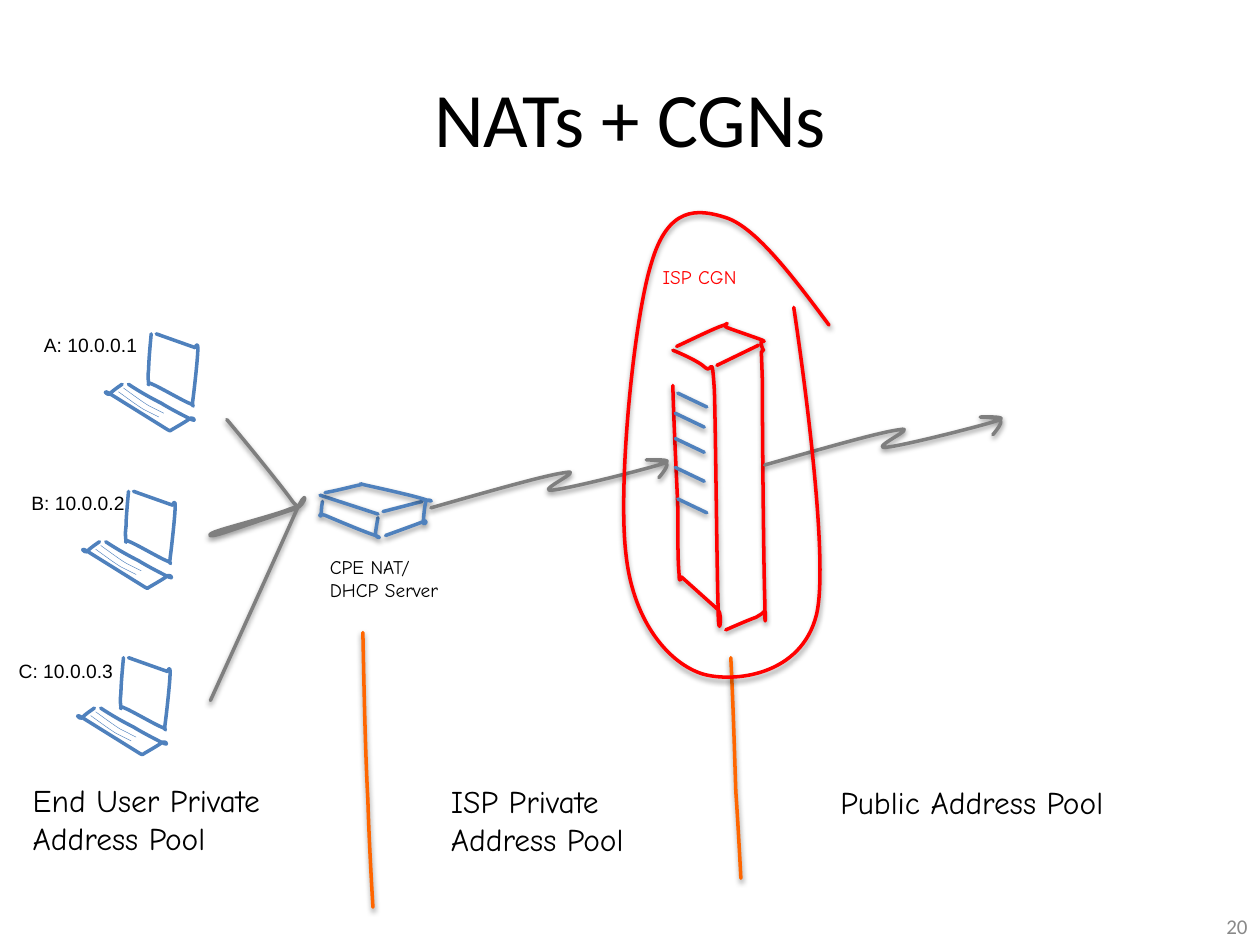
from lxml.etree import SubElement
from pptx import Presentation
from pptx.dml.color import RGBColor
from pptx.enum.text import MSO_ANCHOR as Anchor, MSO_AUTO_SIZE as AutoSize, PP_ALIGN as Align
from pptx.oxml.ns import qn
from pptx.util import Cm, Pt

BLACK = RGBColor(0x00, 0x00, 0x00)
NUMBER_GREY = RGBColor(0x89, 0x89, 0x89)
LINK_GREY = RGBColor(0x7F, 0x7F, 0x7F)
RED = RGBColor(0xFF, 0x00, 0x00)
BLUE = RGBColor(0x4F, 0x81, 0xBD)
ORANGE = RGBColor(0xFF, 0x66, 0x00)

HAND_FONT = "Comic Neue"
GRID = Cm(0.0254)  # one step of the sketch grid

# Strokes: a start point, then (x, y) for a line or
# (x1, y1, x2, y2, x, y) for a cubic curve, in grid steps
LAPTOP_BODY = [
    [(120, 265), (119, 276, 118, 287, 118, 293), (117, 300, 118, 303, 118, 305),
     (119, 307, 115, 302, 121, 305), (126, 307, 145, 318, 150, 320),
     (156, 322, 152, 325, 153, 318), (154, 311, 157, 284, 157, 277),
     (157, 270, 155, 276, 155, 276), (124, 265), (127, 266)],
    [(102, 305), (111, 311, 120, 316, 128, 320), (136, 325, 148, 331, 152, 333),
     (156, 335, 154, 331, 151, 332), (149, 334, 138, 340, 135, 342), (133, 341),
     (88, 313), (80, 308, 85, 314, 87, 313), (88, 311, 97, 305, 97, 305)],
]
LAPTOP_KEYS = [(94, 311), (101, 316, 109, 322, 114, 325), (120, 328, 126, 331, 126, 331)]
KEY_ROWS = [(0, 0), (4, -3)]
LAPTOPS = [("A: 10.0.0.1", (0, 0), (25, 260, 96)),
           ("B: 10.0.0.2", (-18, 125), (15, 385, 95)),
           ("C: 10.0.0.3", (-22, 257), (5, 518, 96))]

CPE_BOX = [
    [(256, 398), (255, 403, 255, 408, 255, 409), (255, 411, 251, 407, 258, 409),
     (265, 412, 291, 423, 298, 425), (305, 428, 298, 427, 298, 424),
     (298, 422, 300, 411, 300, 411)],
    [(254, 393), (300, 408)],
    [(304, 406), (335, 398)],
    [(258, 391), (269, 389, 280, 386, 285, 385), (291, 384, 281, 383, 290, 385),
     (299, 387, 331, 394, 339, 397), (347, 399, 338, 395, 338, 398),
     (337, 401, 336, 412, 336, 415), (336, 418, 341, 412, 336, 414),
     (331, 416, 306, 425, 306, 425)],
]
HOME_LAN = [
    (180, 333), (201, 358, 221, 383, 230, 395), (238, 407, 240, 400, 230, 404),
    (221, 408, 183, 418, 174, 421), (164, 424, 164, 427, 174, 424),
    (184, 421, 224, 407, 234, 404), (244, 401, 245, 383, 234, 408),
    (223, 433, 167, 556, 167, 556)]
UPLINK = [
    (342, 403), (388, 390, 433, 377, 449, 375), (465, 372, 425, 390, 438, 389),
    (451, 388, 514, 372, 526, 368), (539, 364, 513, 365, 513, 365),
    (514, 365, 527, 365, 529, 368), (531, 370, 523, 379, 523, 379)]
UPLINK_SHIFTS = [(0, 0), (265, -34)]

CGN_TOWER = [
    [(534, 306), (535, 342, 537, 378, 538, 403), (538, 428, 538, 446, 539, 456),
     (539, 465, 541, 458, 541, 458), (570, 484), (574, 488, 570, 512, 570, 483),
     (569, 454, 568, 342, 567, 310), (565, 278, 565, 297, 560, 292),
     (554, 286, 534, 278, 534, 278)],
    [(537, 275), (552, 268, 568, 260, 575, 258), (581, 255, 572, 258, 577, 260),
     (582, 262, 600, 268, 605, 270), (609, 272, 603, 270, 604, 272),
     (604, 273, 605, 277, 606, 278), (606, 279, 605, 275, 605, 279),
     (604, 283, 604, 268, 605, 301), (605, 334, 606, 447, 607, 478),
     (607, 508, 608, 483, 607, 485), (605, 487, 605, 487, 600, 490),
     (594, 492, 576, 500, 576, 500)],
    [(569, 290), (602, 274)],
]
SLAT = [(0, 0), (23, 11)]
SLAT_STARTS = [(538, 312), (536, 328), (536, 348), (536, 371), (538, 396)]
CGN_RING = [
    (658, 258), (629, 219, 600, 181, 577, 173), (553, 165, 530, 164, 517, 209),
    (503, 253, 490, 386, 497, 441), (503, 495, 532, 527, 558, 535),
    (583, 542, 636, 536, 648, 488), (660, 439, 630, 244, 630, 244)]

POOL_BORDERS = [
    [(288, 502), (289, 550, 290, 598, 292, 635), (293, 671, 296, 720, 296, 720)],
    [(580, 522), (582, 561, 583, 599, 584, 628), (586, 657, 588, 697, 588, 697)],
]


def bend(pen, stroke):
    """Merge the three points of each cubic step into one curve."""
    outline = pen._element.find(".//" + qn("a:path"))
    segments = iter(outline.findall(qn("a:lnTo")))
    for step in stroke[1:]:
        first, *others = [next(segments) for _ in range(len(step) // 2)]
        if others:
            first.tag = qn("a:cubicBezTo")
        for segment in others:
            first.append(segment[0])
            outline.remove(segment)


def add_stroke(shapes, stroke, color, shift=(0, 0), width=2, shadow=True):
    points = [((step[i] + shift[0]) * GRID, (step[i + 1] + shift[1]) * GRID)
              for step in stroke for i in range(0, len(step), 2)]
    builder = shapes.build_freeform(*points[0], scale=1.0)
    builder.add_line_segments(points[1:], close=False)
    pen = builder.convert_to_shape()
    bend(pen, stroke)
    pen.fill.background()
    pen.line.color.rgb = color
    pen.line.width = Pt(width)
    pen.shadow.inherit = False
    properties = pen._element.spPr
    properties.find(qn("a:ln")).set("cap", "rnd")
    if shadow:
        outer = SubElement(properties.find(qn("a:effectLst")), qn("a:outerShdw"),
                           blurRad=str(Pt(3.1)), dist=str(Pt(1.6)),
                           dir="5400000", rotWithShape="0")
        black = SubElement(outer, qn("a:srgbClr"), val="000000")
        SubElement(black, qn("a:alpha"), val="38000")


def format_text(frame, size, font, color, align=Align.LEFT):
    for paragraph in frame.paragraphs:
        paragraph.alignment = align
        for run in paragraph.runs:
            run.font.size = Pt(size)
            run.font.name = font
            run.font.color.rgb = color


def add_label(slide, text, left, top, width, height, size=11, font=HAND_FONT,
              color=BLACK, wrap=False):
    label = slide.shapes.add_textbox(Cm(left), Cm(top), Cm(width), Cm(height))
    frame = label.text_frame
    frame.text = text
    frame.word_wrap = wrap
    frame.auto_size = AutoSize.SHAPE_TO_FIT_TEXT
    format_text(frame, size, font, color)


def add_title(slide, text):
    title = slide.shapes.title
    title.left, title.top, title.width, title.height = Cm(0.74), Cm(0.76), Cm(23.93), Cm(3.18)
    title.text_frame.text = text
    title.text_frame.vertical_anchor = Anchor.MIDDLE
    format_text(title.text_frame, 44, "Calibri", BLACK, Align.CENTER)


def add_slide_number(slide, number):
    box = slide.shapes.add_textbox(Cm(19.48), Cm(18.16), Cm(5.92), Cm(1.02))
    box.text_frame.text = number
    box.text_frame.word_wrap = True
    box.text_frame.vertical_anchor = Anchor.MIDDLE
    format_text(box.text_frame, 12, "Calibri", NUMBER_GREY, Align.RIGHT)


def add_laptop(slide, shift):
    laptop = slide.shapes.add_group_shape().shapes
    for stroke in LAPTOP_BODY:
        add_stroke(laptop, stroke, BLUE, shift, shadow=False)
    for dx, dy in KEY_ROWS:
        add_stroke(laptop, LAPTOP_KEYS, BLUE, (shift[0] + dx, shift[1] + dy), 0.25, False)


def main():
    deck = Presentation()
    deck.slide_width, deck.slide_height = Cm(25.4), Cm(19.05)
    slide = deck.slides.add_slide(deck.slide_layouts[5])
    add_title(slide, "NATs + CGNs")
    add_slide_number(slide, "20")

    # Home network
    for address, shift, (left, top, width) in LAPTOPS:
        add_laptop(slide, shift)
        add_label(slide, address, left * 0.0254, top * 0.0254, width * 0.0254, 0.74,
                  font="Arial")
    cpe = slide.shapes.add_group_shape().shapes
    for stroke in CPE_BOX:
        add_stroke(cpe, stroke, BLUE)
    add_stroke(slide.shapes, HOME_LAN, LINK_GREY)
    add_label(slide, "CPE NAT/\nDHCP Server", 6.4, 11.07, 3.33, 1.68)

    # Carrier NAT and its links
    for stroke in CGN_TOWER:
        add_stroke(slide.shapes, stroke, RED)
    for start in SLAT_STARTS:
        add_stroke(slide.shapes, SLAT, BLUE, start)
    for shift in UPLINK_SHIFTS:
        add_stroke(slide.shapes, UPLINK, LINK_GREY, shift)
    add_label(slide, "ISP CGN", 13.11, 5.23, 2.64, 0.74, color=RED)

    # Address pools and their borders
    add_label(slide, "Public Address Pool", 16.69, 15.67, 6.96, 1.02, size=18)
    add_label(slide, "ISP Private Address Pool", 8.84, 15.65, 5.36, 1.8, size=18, wrap=True)
    add_label(slide, "End User Private Address Pool", 0.41, 15.62, 7.39, 1.8, size=18, wrap=True)
    for border in POOL_BORDERS:
        add_stroke(slide.shapes, border, ORANGE)
    add_stroke(slide.shapes, CGN_RING, RED)

    deck.save("out.pptx")


if __name__ == "__main__":
    main()
